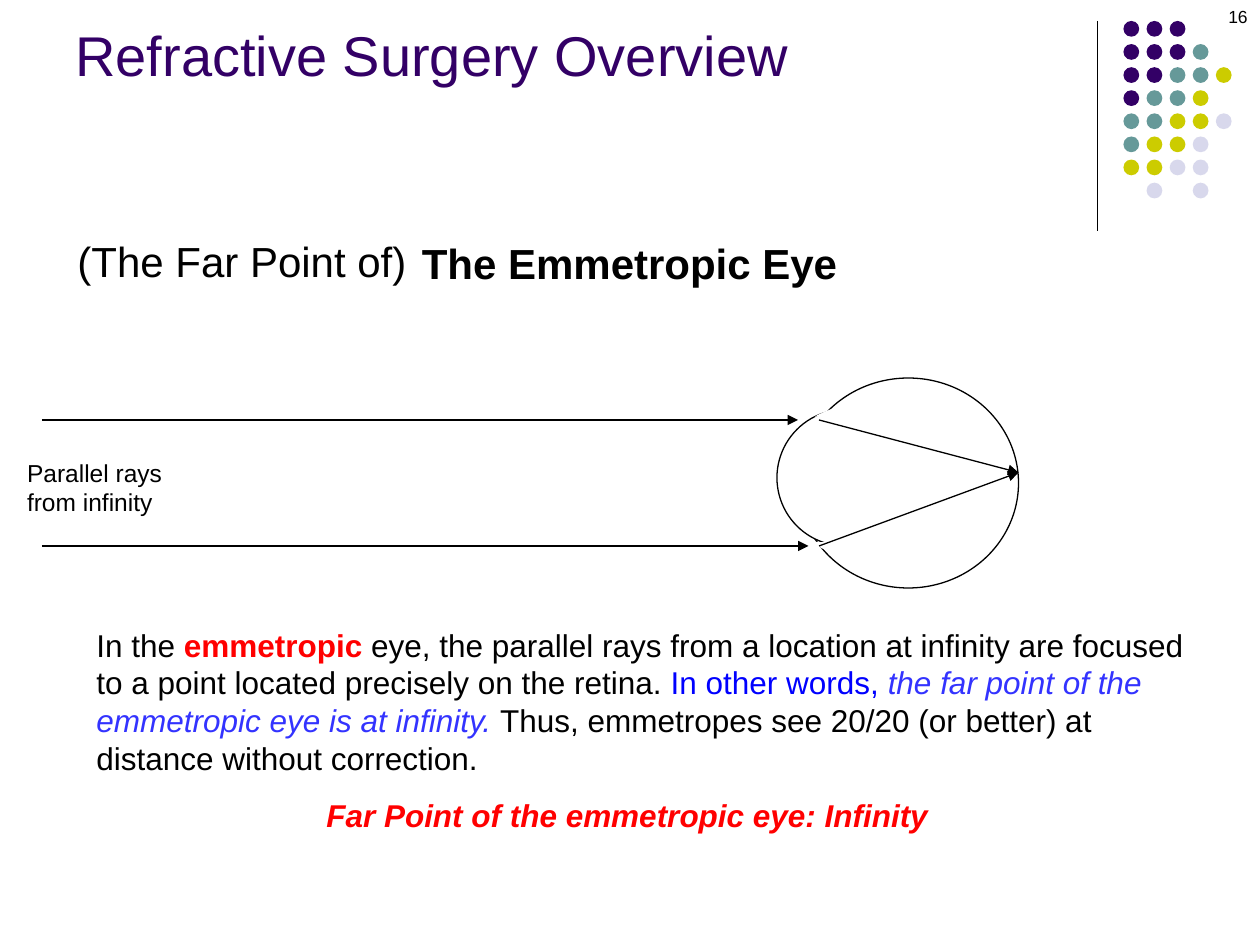
from lxml import etree
from pptx import Presentation
from pptx import util as u
from pptx.dml.color import RGBColor
from pptx.enum import shapes, text
from pptx.oxml.ns import qn

THEME = {
    "font": "Arial",
    "colours": {
        "black": "000000", "white": "FFFFFF", "red": "FF0000",
        "blue": "0000FF", "soft blue": "3333FF",
        "purple": "330066", "teal": "669999", "olive": "CCCC00", "lilac": "D8D8EC",
    },
    "sizes": {"title": 32, "heading": 24, "body": 18, "label": 14, "number": 10},
    "line": 0.75,
}

deck = Presentation()
deck.slide_width, deck.slide_height = u.Inches(10), u.Inches(7.5)
slide = deck.slides.add_slide(deck.slide_layouts[6])

# The slide is a grid of 120 columns by 90 rows of square cells.
CELL = deck.slide_width / 120


def cells(*counts):
    return [round(count * CELL) for count in counts]


def colour(name):
    return RGBColor.from_string(THEME["colours"][name])


def add_text(paragraphs, box, size, wrap=True, align=text.PP_ALIGN.LEFT,
             anchor=text.MSO_ANCHOR.TOP):
    """Each paragraph is a list of runs: (words, colour name, style letters b and i)."""
    frame = slide.shapes.add_textbox(*cells(*box)).text_frame
    frame.word_wrap = wrap
    frame.vertical_anchor = anchor
    for index, runs in enumerate(paragraphs):
        paragraph = frame.add_paragraph() if index else frame.paragraphs[0]
        paragraph.alignment = align
        for words, ink, style in runs:
            run = paragraph.add_run()
            run.text = words
            run.font.name = THEME["font"]
            run.font.size = u.Pt(THEME["sizes"][size])
            run.font.color.rgb = colour(ink)
            run.font.bold = "b" in style
            run.font.italic = "i" in style


# Dot ornament: one letter for each dot, a space for a gap
dot_colours = {"p": "purple", "t": "teal", "o": "olive", "l": "lilac"}
dot_rows = ["ppp", "pppt", "pptto", "ptto", "ttool", "tool", "ooll", " l l"]
for row, letters in enumerate(dot_rows):
    for column, letter in enumerate(letters):
        if letter in dot_colours:
            dot = slide.shapes.add_shape(
                shapes.MSO_SHAPE.OVAL, *cells(107 + 2.2 * column, 2 + 2.2 * row, 1.5, 1.5))
            dot.shadow.inherit = False
            dot.fill.solid()
            dot.fill.fore_color.rgb = colour(dot_colours[letter])
            dot.line.fill.background()

# Eye: globe, cornea, and two moons that mask where the outlines cross
OVAL, MOON = shapes.MSO_SHAPE.OVAL, shapes.MSO_SHAPE.MOON
eye_parts = [
    (OVAL, (76, 36, 21, 20), False, 0),
    (OVAL, (74, 39, 13, 13), True, 0),
    (MOON, (80, 37, 8, 12), True, 331.2),
    (MOON, (80, 43, 8, 12), True, 35.4),
]
for outline, box, filled, angle in eye_parts:
    part = slide.shapes.add_shape(outline, *cells(*box))
    part.shadow.inherit = False
    part.rotation = angle
    if filled:
        part.fill.solid()
        part.fill.fore_color.rgb = colour("white")
    else:
        part.fill.background()
    if outline == MOON:
        part.line.fill.background()
        part._element.spPr.find(qn("a:xfrm")).set("flipH", "1")
    else:
        part.line.color.rgb = colour("black")
        part.line.width = u.Pt(THEME["line"])

# Divider beside the dots, then the refracted and the incoming rays
rays = [
    ((104.5, 2, 104.5, 22), False),
    ((78, 40, 97, 45), True),
    ((78, 52, 97, 45), True),
    ((4, 40, 76, 40), True),
    ((4, 52, 77, 52), True),
]
for ends, has_arrow in rays:
    ray = slide.shapes.add_connector(shapes.MSO_CONNECTOR.STRAIGHT, *cells(*ends))
    ray.line.color.rgb = colour("black")
    ray.line.width = u.Pt(THEME["line"])
    if has_arrow:
        etree.SubElement(ray.line._get_or_add_ln(), qn("a:tailEnd"), type="triangle")
    etree.SubElement(ray._element.spPr, qn("a:effectLst"))

add_text([[("The Emmetropic Eye", "black", "b")]], (39, 22, 42, 6), "heading", wrap=False)
add_text([
    [("In the ", "black", ""), ("emmetropic", "red", "b"),
     (" eye, the parallel rays from a location at infinity are focused", "black", "")],
    [("to a point located precisely on the retina. ", "black", ""),
     ("In other words, ", "blue", ""), ("the far point of the", "soft blue", "i")],
    [("emmetropic eye is at infinity. ", "soft blue", "i"),
     ("Thus, emmetropes see 20/20 (or better) at distance without correction.", "black", "")],
], (8, 59, 107, 15.7), "body")
add_text([[("Far Point of the emmetropic eye: Infinity", "red", "bi")]],
         (29.9, 75.2, 60.4, 4.8), "body", wrap=False)
add_text([[("16", "black", "")]], (92, 0, 28, 6), "number", align=text.PP_ALIGN.RIGHT)
add_text([[("Parallel rays from infinity", "black", "")]], (1.4, 43, 15.8, 6.8), "label")
add_text([[("Refractive Surgery Overview", "purple", "")]], (6, 1.6, 99, 7.3), "title",
         anchor=text.MSO_ANCHOR.BOTTOM)
add_text([[("(The Far Point of)", "black", "")]], (5.9, 21.8, 34, 6), "heading",
         wrap=False, align=text.PP_ALIGN.RIGHT)

deck.save("out.pptx")
